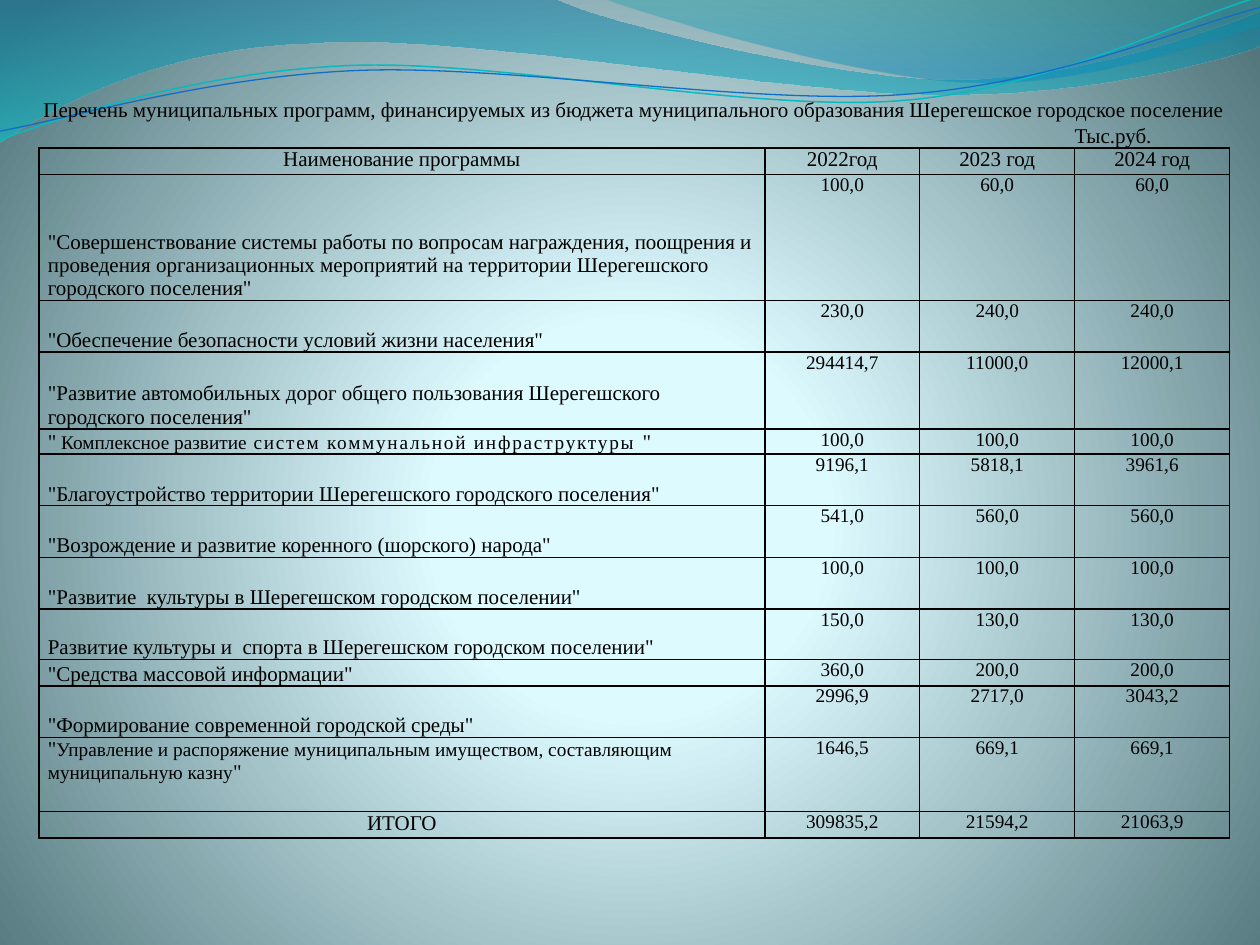
from math import cos, radians, sin

from lxml import etree
from pptx import Presentation
from pptx.dml.color import RGBColor
from pptx.enum.text import MSO_ANCHOR, PP_ALIGN
from pptx.oxml.ns import qn
from pptx.util import Inches, Pt

FONT = "Times New Roman"
BLACK = RGBColor(0x00, 0x00, 0x00)
PALE = RGBColor(0xDE, 0xFB, 0xFF)
PALE_MID = RGBColor(0xDD, 0xFA, 0xFF)
SLATE = RGBColor(0x52, 0x76, 0x7C)
DEEP_BLUE = RGBColor(0x00, 0x74, 0xA1)
CYAN = RGBColor(0x00, 0xC6, 0xCF)
TEAL = RGBColor(0x00, 0xA1, 0xA9)
SKY = RGBColor(0x00, 0x8B, 0xBF)
LINE_TEAL = RGBColor(0x0A, 0xB8, 0xBF)
LINE_BLUE = RGBColor(0x0F, 0x6F, 0xC6)

NO_STYLE = "{2D5ABB26-0587-4C30-8999-92F81FD0307C}"
TILT = 357.3
BIG, SMALL = 12, 11
TITLE = ("Перечень муниципальных программ, финансируемых из бюджета "
         "муниципального образования Шерегешское городское поселение")
HEADER = ["Наименование программы", "2022год", "2023 год", "2024 год"]
TOTAL = ["309835,2", "21594,2", "21063,9"]

# Row height, name runs as (text, size, letter spacing), yearly amounts
PROGRAMS = [
    (1, [('"Совершенствование системы работы по вопросам награждения, поощрения и '
          'проведения организационных мероприятий на территории Шерегешского '
          'городского поселения"', BIG, 0)], ["100,0", "60,0", "60,0"]),
    (0.41, [('"Обеспечение безопасности условий жизни населения"', BIG, 0)],
     ["230,0", "240,0", "240,0"]),
    (0.61, [('"Развитие автомобильных дорог общего пользования Шерегешского '
             'городского поселения"', BIG, 0)], ["294414,7", "11000,0", "12000,1"]),
    (0.2, [('"', BIG, 0), (" Комплексное развитие", SMALL, 0),
           (" систем коммунальной инфраструктуры ", SMALL, 1), ('"', BIG, 0)],
     ["100,0", "100,0", "100,0"]),
    (0.41, [('"Благоустройство территории Шерегешского городского поселения"', BIG, 0)],
     ["9196,1", "5818,1", "3961,6"]),
    (0.41, [('"Возрождение и развитие коренного (шорского) народа"', BIG, 0)],
     ["541,0", "560,0", "560,0"]),
    (0.41, [('"Развитие  культуры в Шерегешском городском поселении"', BIG, 0)],
     ["100,0", "100,0", "100,0"]),
    (0.4, [('Развитие культуры и  спорта в Шерегешском городском поселении"', BIG, 0)],
     ["150,0", "130,0", "130,0"]),
    (0.21, [('"Средства массовой информации"', BIG, 0)], ["360,0", "200,0", "200,0"]),
    (0.41, [('"Формирование современной городской среды"', BIG, 0)],
     ["2996,9", "2717,0", "3043,2"]),
    (0.59, [('"', BIG, 0),
            ("Управление и распоряжение муниципальным имуществом, составляющим "
             "муниципальную казну", SMALL, 0), ('"', BIG, 0)],
     ["1646,5", "669,1", "669,1"]),
]


def add_sub(parent, tag, **attrs):
    return etree.SubElement(parent, qn(tag), {k: str(v) for k, v in attrs.items()})


def swap_gradient(props, stops, center=None):
    """Replace the solid fill in props by stops of (percent, colour, opacity)."""
    solid = props.find(qn("a:solidFill"))
    grad = etree.Element(qn("a:gradFill"), rotWithShape="1")
    stop_list = add_sub(grad, "a:gsLst")
    for pos, color, opacity in stops:
        gs = add_sub(stop_list, "a:gs", pos=pos * 1000)
        clr = add_sub(gs, "a:srgbClr", val=color)
        if opacity < 100:
            add_sub(clr, "a:alpha", val=opacity * 1000)
    if center:
        path = add_sub(grad, "a:path", path="circle")
        add_sub(path, "a:fillToRect", **{k: v * 1000 for k, v in center.items()})
    else:
        add_sub(grad, "a:lin", ang=5400000, scaled=1)
    props.replace(solid, grad)


def paint_background(slide):
    slide.background.fill.solid()
    slide.background.fill.fore_color.rgb = PALE
    props = slide._element.xpath(".//p:bgPr")[0]
    swap_gradient(props, [(0, PALE, 100), (25, PALE_MID, 100), (100, SLATE, 100)],
                  dict(l=10, t=110, r=10, b=100))


def add_outline(slide, start, segments, close):
    """Join straight (x, y) and cubic (x1, y1, x2, y2, x, y) segments."""
    builder = slide.shapes.build_freeform(Inches(start[0]), Inches(start[1]))
    for seg in segments:
        pairs = zip(seg[::2], seg[1::2])
        builder.add_line_segments([(Inches(x), Inches(y)) for x, y in pairs], close=False)
    sp = builder.convert_to_shape()
    sp.shadow.inherit = False
    path = sp._element.xpath(".//a:path")[0]
    lines = iter(path.findall(qn("a:lnTo")))
    for seg in segments:
        group = [next(lines) for _ in seg[::2]]
        if len(group) == 3:
            curve = etree.Element(qn("a:cubicBezTo"))
            path.replace(group[0], curve)
            for line in group:
                curve.append(line[0])
            for line in group[1:]:
                path.remove(line)
    if close:
        add_sub(path, "a:close")
    return sp


def add_wave(slide, start, segments, stops):
    sp = add_outline(slide, start, segments, True)
    sp.line.fill.background()
    sp.fill.solid()
    sp.fill.fore_color.rgb = stops[0][1]
    swap_gradient(sp._element.spPr, stops)


def untilt(seg, center):
    """Turn the points of a segment back by TILT around the center."""
    angle, (cx, cy), out = radians(-TILT), center, []
    for x, y in zip(seg[::2], seg[1::2]):
        dx, dy = x - cx, y - cy
        out += [cx + dx * cos(angle) - dy * sin(angle),
                cy + dx * sin(angle) + dy * cos(angle)]
    return out


def add_ribbon(slide, center, start, segments, color, width):
    sp = add_outline(slide, untilt(start, center),
                     [untilt(seg, center) for seg in segments], False)
    sp.rotation = TILT
    sp.fill.background()
    sp.line.color.rgb = color
    sp.line.width = Pt(width)


def draw_waves(slide):
    add_wave(slide, (0, 0), [
        (4.4, -0.01), (4.76, 0.17, 6.64, 0.63, 7.58, 0.63),
        (8.53, 0.63, 9.58, 0.26, 10, 0.09), (10.01, 0.36),
        (9.83, 0.44, 8.7, 0.76, 7.46, 0.75), (6.22, 0.75, 3.82, 0.28, 2.57, 0.34),
        (1.29, 0.36, 0.46, 0.83, -0.01, 1.13), (0, 0)],
        [(0, DEEP_BLUE, 45), (100, CYAN, 55)])
    add_wave(slide, (4.79, -0.01), [
        (5.09, 0.11, 6.82, 0.62, 7.69, 0.65), (8.56, 0.69, 9.61, 0.32, 10, 0.21),
        (10, 0), (4.79, -0.01)], [(0, TEAL, 30), (80, SKY, 45)])
    add_ribbon(slide, (4.99, 0.58), (0, 1.11), [
        (0.48, 0.93, 1.58, 0.57, 2.77, 0.52), (3.95, 0.47, 5.93, 0.89, 7.13, 0.8),
        (8.33, 0.71, 9.38, 0.15, 9.98, -0.02)], LINE_TEAL, 0.85)
    add_ribbon(slide, (5, 0.59), (0, 1.04), [
        (0.47, 0.96, 1.64, 0.61, 2.83, 0.56), (4.03, 0.51, 5.97, 0.84, 7.17, 0.75),
        (8.36, 0.67, 9.41, 0.21, 10, 0.06)], LINE_BLUE, 0.75)


def set_borders(cell, sides):
    props = cell._tc.get_or_add_tcPr()
    for i, side in enumerate(sides):
        ln = etree.Element(qn("a:ln" + side), w=str(Pt(1)))
        add_sub(add_sub(ln, "a:solidFill"), "a:srgbClr", val=BLACK)
        props.insert(i, ln)


def fill_cell(cell, runs, align=PP_ALIGN.CENTER, anchor=MSO_ANCHOR.TOP, inset=0, sides="LRTB"):
    cell.fill.background()
    cell.margin_left = cell.margin_right = Inches(inset)
    cell.margin_top = cell.margin_bottom = 0
    cell.vertical_anchor = anchor
    p = cell.text_frame.paragraphs[0]
    p.alignment = align
    for text, size, spacing in runs:
        r = p.add_run()
        r.text = text
        r.font.name, r.font.size = FONT, Pt(size)
        r.font.color.rgb = BLACK
        if spacing:
            r._r.get_or_add_rPr().set("spc", str(spacing * 100))
    if not runs:
        add_sub(p._p, "a:endParaRPr", sz=BIG * 100)
    set_borders(cell, sides)


def add_program_table(slide, left, top, width, height):
    heights = [0.35, 0.2, 0.21] + [h for h, _, _ in PROGRAMS] + [0.21]
    table = slide.shapes.add_table(len(heights), 4, left, top, width, height).table
    table.first_row = table.horz_banding = False
    table._tbl.tblPr.find(qn("a:tableStyleId")).text = NO_STYLE
    for col, w in zip(table.columns, [5.76, 1.23, 1.23, 1.23]):
        col.width = Inches(w)
    for row, h in zip(table.rows, heights):
        row.height = Inches(h)

    table.cell(0, 0).merge(table.cell(0, 3))
    fill_cell(table.cell(0, 0), [(TITLE, BIG, 0)], anchor=MSO_ANCHOR.BOTTOM, sides="")
    for c in range(4):
        unit = [("Тыс.руб.", BIG, 0)] if c == 3 else []
        fill_cell(table.cell(1, c), unit, PP_ALIGN.LEFT, MSO_ANCHOR.BOTTOM, sides="B")
        fill_cell(table.cell(2, c), [(HEADER[c], BIG, 0)])

    last = len(heights) - 1
    for i, (_, name, _) in enumerate(PROGRAMS, 3):
        anchor = MSO_ANCHOR.TOP if i == last - 1 else MSO_ANCHOR.BOTTOM
        fill_cell(table.cell(i, 0), name, PP_ALIGN.LEFT, anchor, 0.07)
    fill_cell(table.cell(last, 0), [("ИТОГО", BIG, 0)])
    for i, amounts in enumerate([a for _, _, a in PROGRAMS] + [TOTAL], 3):
        for c, amount in enumerate(amounts, 1):
            fill_cell(table.cell(i, c), [(amount, SMALL, 0)], inset=0.07)


def main():
    prs = Presentation()
    prs.slide_width, prs.slide_height = Inches(10), Inches(7.5)
    s = prs.slides.add_slide(prs.slide_layouts[6])
    paint_background(s)
    draw_waves(s)
    add_program_table(s, Inches(0.31), Inches(0.62), Inches(9.45), Inches(6.03))
    prs.save("out.pptx")


if __name__ == "__main__":
    main()
